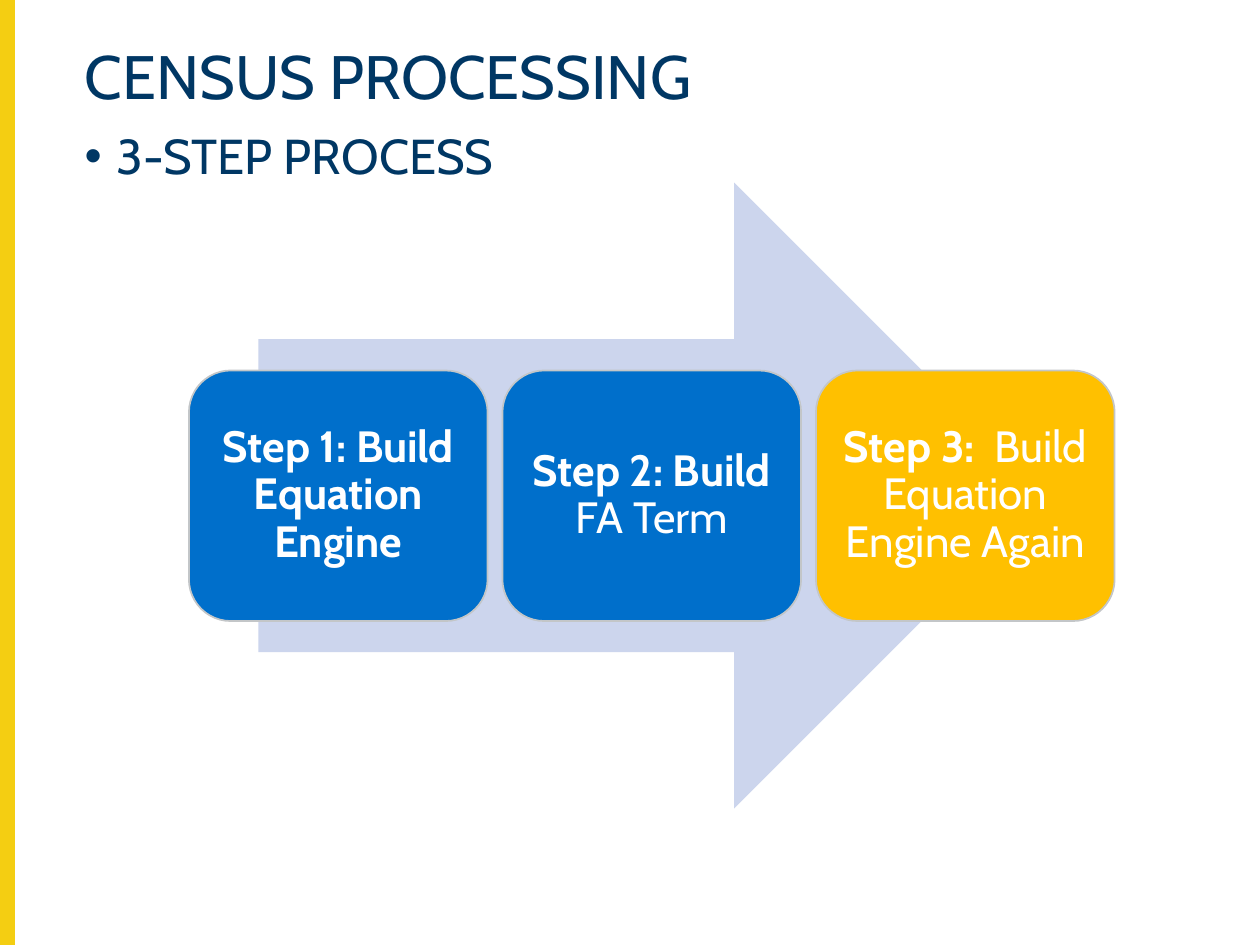
from dataclasses import dataclass

from lxml.etree import SubElement
from pptx import Presentation
from pptx.dml.color import RGBColor
from pptx.enum.shapes import MSO_SHAPE as Shape
from pptx.enum.text import MSO_ANCHOR as Anchor, MSO_AUTO_SIZE as AutoSize, PP_ALIGN as Align
from pptx.oxml.ns import qn
from pptx.util import Cm, Pt

FONT = "Cabin"
COLORS = {
    "bar": "F4CE12",
    "navy": "003764",
    "arrow": "CCD5ED",
    "blue": "006FCB",
    "gold": "FFC000",
    "outline": "C3C6C8",
    "white": "FFFFFF",
}
STEP_LEFT, STEP_TOP, STEP_W, STEP_H = 3.81, 7.47, 6.02, 5.05
STEP_PITCH = 6.32


@dataclass
class Step:
    bold: str
    regular: str
    fill: str


STEPS = [
    Step("Step 1: Build Equation Engine", "", "blue"),
    Step("Step 2: Build", " FA Term", "blue"),
    Step("Step 3:", "  Build Equation Engine Again", "gold"),
]


def rgb(name: str) -> RGBColor:
    return RGBColor.from_string(COLORS[name])


def format_run(r, size: float, color: str, bold: bool = False) -> None:
    r.font.name = FONT
    r.font.size = Pt(size)
    r.font.bold = bold
    r.font.color.rgb = rgb(color)


def add_block(s, kind, left: float, top: float, width: float, height: float,
              fill: str, line: str | None = None):
    """Add a flat preset shape; lengths are in centimetres."""
    sp = s.shapes.add_shape(kind, Cm(left), Cm(top), Cm(width), Cm(height))
    sp.shadow.inherit = False
    sp.fill.solid()
    sp.fill.fore_color.rgb = rgb(fill)
    if line:
        sp.line.color.rgb = rgb(line)
        sp.line.width = Pt(1)
    else:
        sp.line.fill.background()
    return sp


def fill_placeholder(sp, text: str, size: float, left: float, top: float,
                     width: float, height: float):
    """Place and format a one-paragraph placeholder and return the paragraph."""
    sp.left, sp.top, sp.width, sp.height = Cm(left), Cm(top), Cm(width), Cm(height)
    tf = sp.text_frame
    tf.text = text
    tf.auto_size = AutoSize.NONE
    tf.vertical_anchor = Anchor.TOP
    p = tf.paragraphs[0]
    p.alignment = Align.LEFT
    p.line_spacing = 0.9
    format_run(p.runs[0], size, "navy")
    return p


def add_bullet(p, indent: float) -> None:
    pPr = p._p.get_or_add_pPr()
    pPr.set("marL", str(Cm(indent)))
    pPr.set("indent", str(-Cm(indent)))
    SubElement(pPr, qn("a:buFont"), typeface="Arial")
    SubElement(pPr, qn("a:buChar"), char="•")


def add_step(s, step: Step, left: float) -> None:
    sp = add_block(s, Shape.ROUNDED_RECTANGLE, left, STEP_TOP, STEP_W, STEP_H,
                   step.fill, "outline")
    tf = sp.text_frame
    tf.word_wrap = True
    tf.vertical_anchor = Anchor.MIDDLE
    tf.margin_left = tf.margin_right = tf.margin_top = tf.margin_bottom = Cm(0.25)
    p = tf.paragraphs[0]
    p.alignment = Align.CENTER
    p.line_spacing = 0.9
    for text, bold in ((step.bold, True), (step.regular, False)):
        if text:
            r = p.add_run()
            r.text = text
            format_run(r, 25, "white", bold)


def main() -> None:
    prs = Presentation()
    prs.slide_width, prs.slide_height = Cm(25.4), Cm(19.05)
    s = prs.slides.add_slide(prs.slide_layouts[1])

    add_block(s, Shape.RECTANGLE, 0, 0, 0.28, 19.05, "bar", "bar")
    fill_placeholder(s.shapes.title, "CENSUS PROCESSING", 35, 1.45, 0.81, 23.06, 2.18)
    p = fill_placeholder(s.placeholders[1], "3-STEP PROCESS", 28, 1.45, 2.54, 23.16, 14.53)
    p.space_before = Pt(10)
    add_bullet(p, 0.64)

    add_block(s, Shape.RIGHT_ARROW, 5.21, 3.68, 15.9, 12.62, "arrow")
    for i, step in enumerate(STEPS):
        add_step(s, step, STEP_LEFT + i * STEP_PITCH)

    prs.save("out.pptx")


if __name__ == "__main__":
    main()
